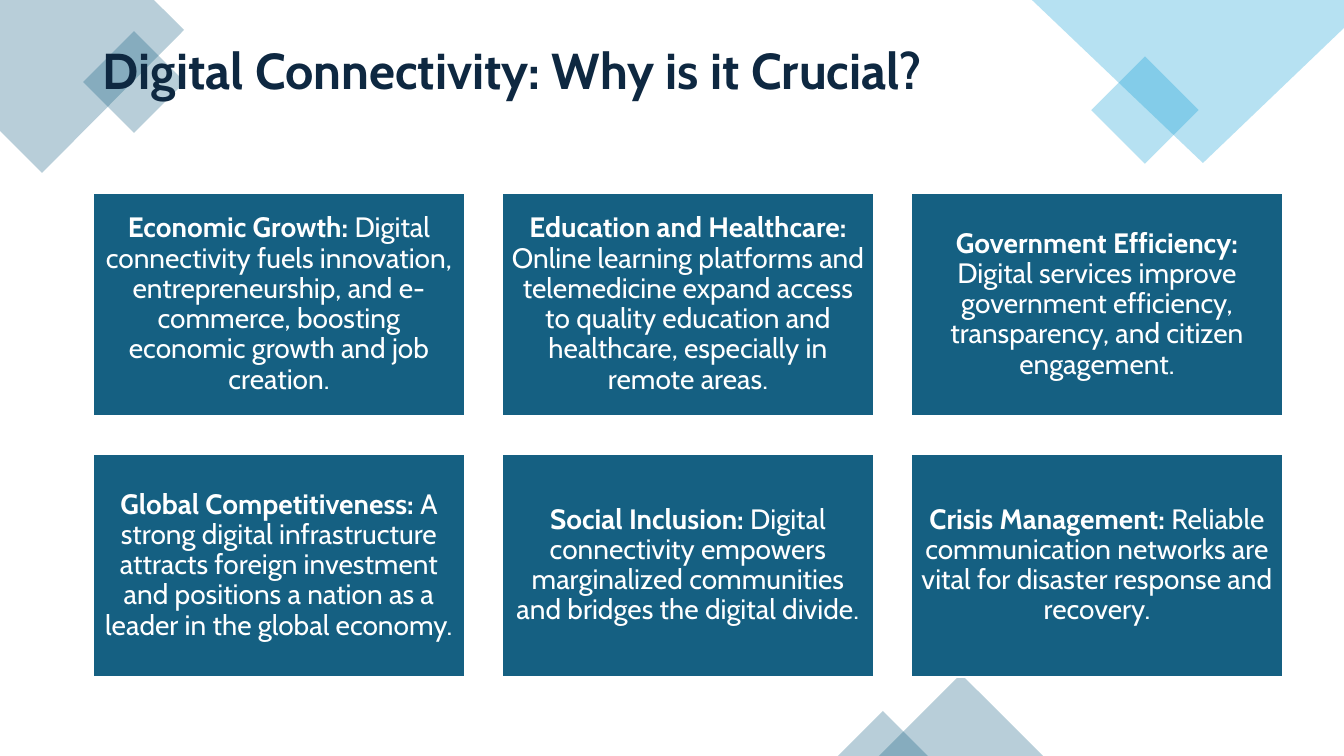
from lxml import etree
from pptx import Presentation
from pptx import util as u
from pptx.dml.color import RGBColor
from pptx.enum import shapes, text
from pptx.oxml.ns import qn

PX = 914400 / 100.8  # EMU in one px
THEME = {
    "font": "Cabin", "title_size": 36, "card_size": 20,
    "teal": "156082", "sky": "0F9ED5", "navy": "0E2841", "white": "FFFFFF",
}


def add_text(p, content, size, color, bold=False):
    r = p.add_run()
    r.text = content
    r.font.name = THEME["font"]
    r.font.size = u.Pt(size)
    r.font.bold = bold
    r.font.color.rgb = RGBColor.from_string(THEME[color])


def tint(sp, color):
    """Fill a decoration at 30% opacity, with no line or shadow."""
    sp.shadow.inherit = False
    sp.line.fill.background()
    sp.fill.solid()
    sp.fill.fore_color.rgb = RGBColor.from_string(THEME[color])
    clr = sp.fill._xPr.find(".//" + qn("a:srgbClr"))
    etree.SubElement(clr, qn("a:alpha"), val="30000")


prs = Presentation()
prs.slide_width, prs.slide_height = u.Emu(round(1344 * PX)), u.Emu(round(756 * PX))
s = prs.slides.add_slide(prs.slide_layouts[6])

# Corner outlines
corners = [
    ("teal", [(0, 0), (154, 0), (184, 30), (42, 173), (0, 131)]),
    ("sky", [(1032, 0), (1344, 0), (1344, 28), (1203, 163)]),
]
for color, points in corners:
    outline = s.shapes.build_freeform(*points[0], scale=PX)
    outline.add_line_segments(points[1:], close=True)
    tint(outline.convert_to_shape(), color)

# Turned squares at the top, triangles at the bottom
SQUARE = shapes.MSO_SHAPE.RECTANGLE
TRIANGLE = shapes.MSO_SHAPE.ISOSCELES_TRIANGLE
decorations = [
    (SQUARE, "teal", 315, (98, 46, 72, 72)),
    (SQUARE, "sky", 315, (1107, 72, 76, 76)),
    (TRIANGLE, "teal", 0, (879, 674, 164, 82)),
    (TRIANGLE, "teal", 0, (838, 711, 90, 45)),
]
for kind, color, turn, box in decorations:
    sp = s.shapes.add_shape(kind, *[u.Emu(round(v * PX)) for v in box])
    sp.rotation = turn
    tint(sp, color)

# Title
sp = s.shapes.add_textbox(*[u.Emu(round(v * PX)) for v in (93, 0, 1159, 146)])
tf = sp.text_frame
tf.word_wrap = True
tf.vertical_anchor = text.MSO_ANCHOR.MIDDLE
p = tf.paragraphs[0]
p.line_spacing = 0.9
add_text(p, "Digital Connectivity: Why is it Crucial?",
         size=THEME["title_size"], color="navy", bold=True)

# Cards, three to a row
cards = [
    ("Economic Growth: ", "Digital connectivity fuels innovation, entrepreneurship, "
     "and e-commerce, boosting economic growth and job creation."),
    ("Education and Healthcare: ", "Online learning platforms and telemedicine expand "
     "access to quality education and healthcare, especially in remote areas."),
    ("Government Efficiency: ", "Digital services improve government efficiency, "
     "transparency, and citizen engagement."),
    ("Global Competitiveness: ", "A strong digital infrastructure attracts foreign "
     "investment and positions a nation as a leader in the global economy."),
    ("Social Inclusion: ", "Digital connectivity empowers marginalized communities "
     "and bridges the digital divide."),
    ("Crisis Management: ", "Reliable communication networks are vital for disaster "
     "response and recovery."),
]
for i, (heading, body) in enumerate(cards):
    row, col = divmod(i, 3)
    box = (93 + 409 * col, 193 + 261 * row, 372, 223)
    sp = s.shapes.add_shape(SQUARE, *[u.Emu(round(v * PX)) for v in box])
    sp.shadow.inherit = False
    sp.fill.solid()
    sp.fill.fore_color.rgb = RGBColor.from_string(THEME["teal"])
    sp.line.color.rgb = RGBColor.from_string(THEME["white"])
    sp.line.width = u.Pt(1.5)
    tf = sp.text_frame
    tf.word_wrap = True
    tf.vertical_anchor = text.MSO_ANCHOR.MIDDLE
    tf.margin_left = tf.margin_right = tf.margin_top = tf.margin_bottom = u.Emu(round(8 * PX))
    p = tf.paragraphs[0]
    p.alignment = text.PP_ALIGN.CENTER
    p.line_spacing = 0.9
    add_text(p, heading, size=THEME["card_size"], color="white", bold=True)
    add_text(p, body, size=THEME["card_size"], color="white")

prs.save("out.pptx")
